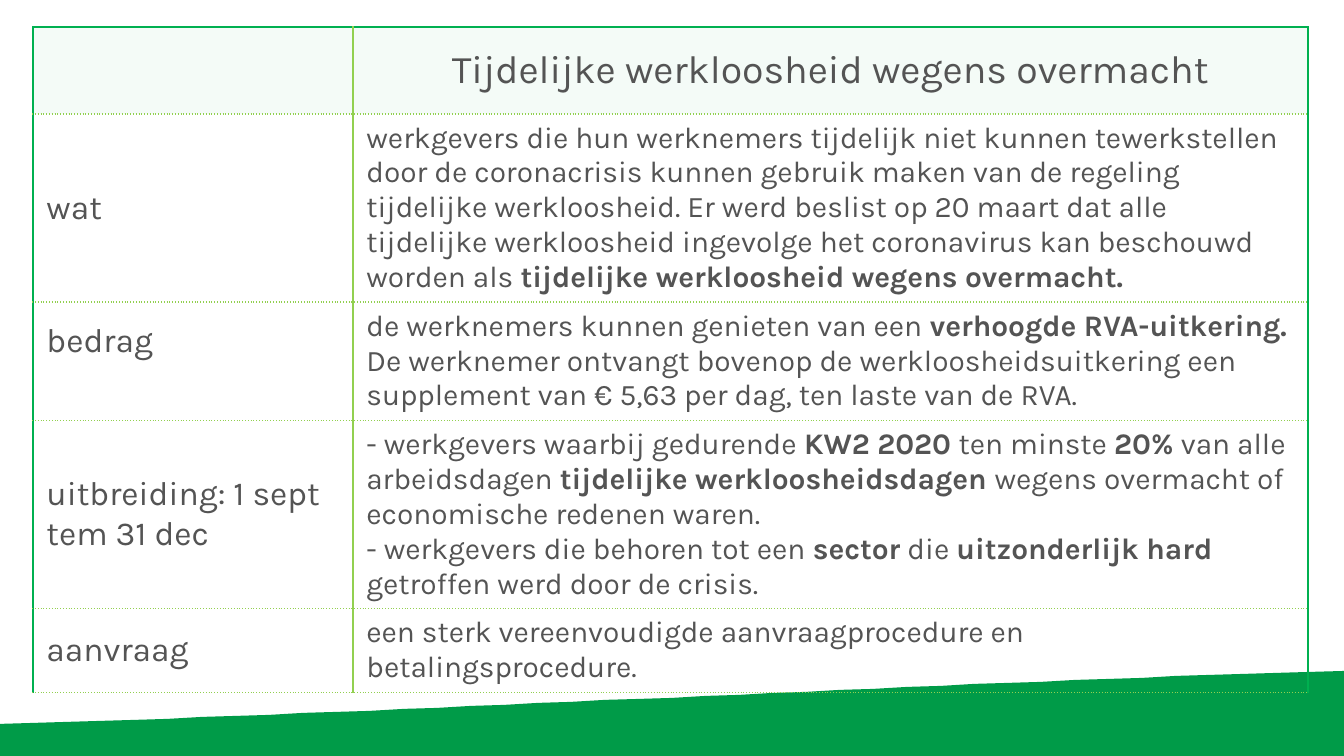
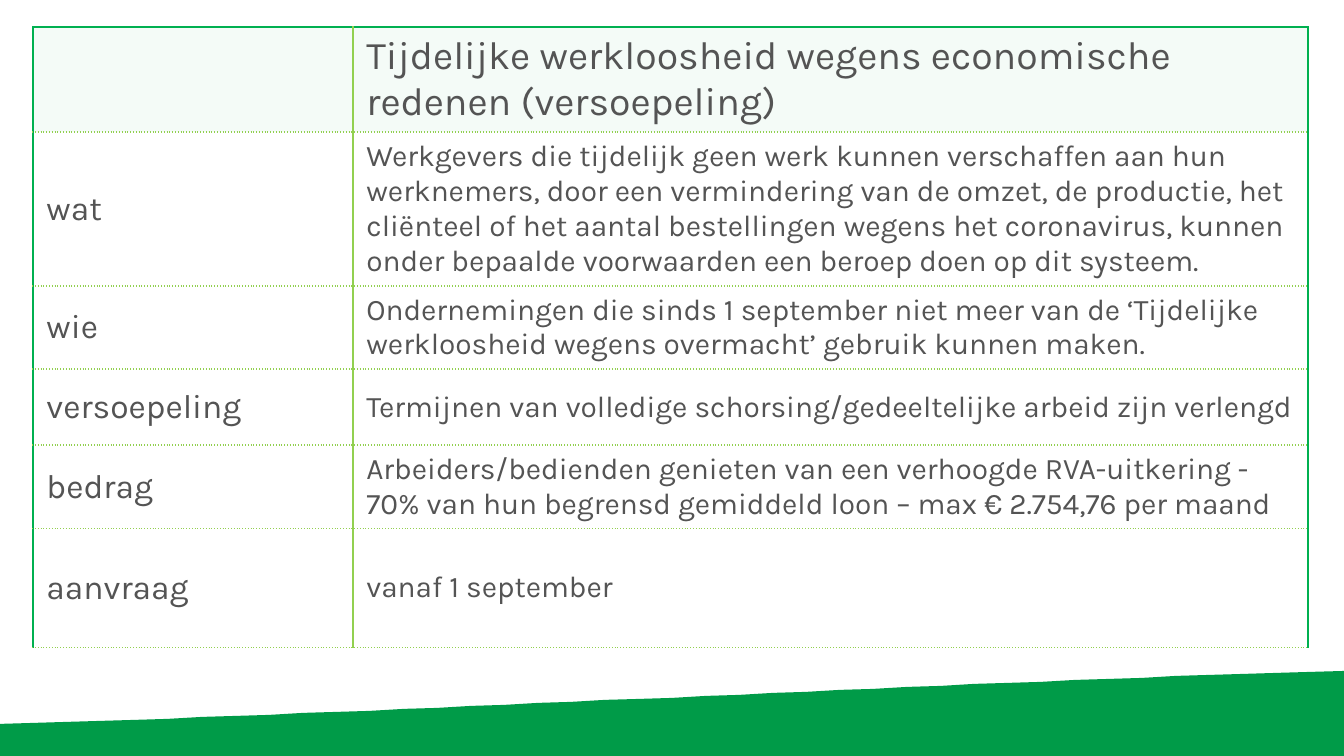
"""Build two table slides on temporary unemployment schemes."""
from lxml import etree
from pptx import Presentation
from pptx import util as u
from pptx.dml.color import RGBColor
from pptx.enum import text
from pptx.oxml.ns import qn

EMU_PER_PX = 914400 / 134.4
FONT = "Karla"
INK = RGBColor(0x54, 0x54, 0x54)
HEADER_TINT = RGBColor(0xF4, 0xFB, 0xF7)
HILL_GREEN = RGBColor(0x00, 0x9B, 0x48)
FRAME_GREEN = RGBColor(0x00, 0xB0, 0x50)
RULE_GREEN = RGBColor(0x92, 0xD0, 0x50)

SLIDE_W, SLIDE_H = 1344, 756
TABLE_LEFT, TABLE_TOP = 33, 27
COLUMNS = [320, 955]
HILL_CURVE = [(0, 724), (450, 711), (894, 684), (1345, 671)]
CURVE_STEPS = 40


def px(length):
    return u.Emu(round(length * EMU_PER_PX))


def add_border(cell, side, color, dash):
    line = etree.SubElement(cell._tc.get_or_add_tcPr(), qn(f"a:ln{side}"), w=str(u.Pt(1)))
    fill = etree.SubElement(line, qn("a:solidFill"))
    etree.SubElement(fill, qn("a:srgbClr"), val=str(color))
    etree.SubElement(line, qn("a:prstDash"), val=dash)


schemes = [
    {
        "heading": "Tijdelijke werkloosheid wegens overmacht",
        "align": text.PP_ALIGN.CENTER,
        "heading_height": 87,
        "topics": [
            ("wat", 188, [
                ("werkgevers die hun werknemers tijdelijk niet kunnen tewerkstellen door de coronacrisis "
                 "kunnen gebruik maken van de regeling tijdelijke werkloosheid. Er werd beslist op "
                 "20 maart dat alle tijdelijke werkloosheid ingevolge het coronavirus kan beschouwd "
                 "worden als ", False),
                ("tijdelijke werkloosheid wegens overmacht. ", True)]),
            ("bedrag", 118, [
                ("de werknemers kunnen genieten van een ", False),
                ("verhoogde RVA-uitkering. ", True),
                ("De werknemer ontvangt bovenop de werkloosheidsuitkering een supplement van "
                 "€ 5,63 per dag, ten laste van de RVA. ", False)]),
            ("uitbreiding: 1 sept tem 31 dec", 188, [
                ("- werkgevers waarbij gedurende ", False),
                ("KW2 2020 ", True),
                ("ten minste ", False),
                ("20%", True),
                (" van alle arbeidsdagen ", False),
                ("tijdelijke werkloosheidsdagen ", True),
                ("wegens overmacht of economische redenen waren. ", False),
                ("\n", False),
                ("- werkgevers die behoren tot een ", False),
                ("sector", True),
                (" die ", False),
                ("uitzonderlijk hard ", True),
                ("getroffen werd door de crisis.", False)]),
            ("aanvraag", 84, [
                ("een sterk vereenvoudigde aanvraagprocedure en betalingsprocedure.", False)]),
        ],
        "raised_topic": "bedrag",
    },
    {
        "heading": "Tijdelijke werkloosheid wegens economische redenen (versoepeling)",
        "align": text.PP_ALIGN.LEFT,
        "heading_height": 105,
        "topics": [
            ("wat", 154, [
                ("Werkgevers die tijdelijk geen werk kunnen verschaffen aan hun werknemers, door een "
                 "vermindering van de omzet, de productie, het cliënteel of het aantal bestellingen "
                 "wegens het coronavirus, kunnen onder bepaalde voorwaarden een beroep doen op dit "
                 "systeem.", False)]),
            ("wie", 83, [
                ("Ondernemingen die sinds 1 september niet meer van de ‘Tijdelijke werkloosheid "
                 "wegens overmacht’ gebruik kunnen maken.", False)]),
            ("versoepeling", 76, [
                ("Termijnen van volledige schorsing/gedeeltelijke arbeid zijn verlengd", False)]),
            ("bedrag", 83, [
                ("Arbeiders/bedienden genieten van een verhoogde RVA-uitkering - 70% van hun "
                 "begrensd gemiddeld loon – max € 2.754,76 per maand", False)]),
            ("aanvraag", 119, [("vanaf 1 september", False)]),
        ],
        "raised_topic": None,
    },
]

deck = Presentation()
deck.slide_width, deck.slide_height = px(SLIDE_W), px(SLIDE_H)

start, pull_1, pull_2, end = HILL_CURVE
hill_top = []
for step in range(CURVE_STEPS + 1):
    t = step / CURVE_STEPS
    weights = [(1 - t) ** 3, 3 * t * (1 - t) ** 2, 3 * t ** 2 * (1 - t), t ** 3]
    hill_top.append(tuple(sum(w * point[axis] for w, point in zip(weights, HILL_CURVE))
                          for axis in (0, 1)))

for scheme in schemes:
    slide = deck.slides.add_slide(deck.slide_layouts[6])

    outline = slide.shapes.build_freeform(*start, scale=EMU_PER_PX)
    outline.add_line_segments(hill_top[1:] + [(SLIDE_W, SLIDE_H), (0, SLIDE_H)], close=True)
    hill = outline.convert_to_shape()
    hill.shadow.inherit = False
    hill.fill.solid()
    hill.fill.fore_color.rgb = HILL_GREEN
    hill.line.fill.background()

    rows = [("", scheme["heading_height"], [(scheme["heading"], False)])] + scheme["topics"]
    heights = [height for _, height, _ in rows]
    overview = slide.shapes.add_table(
        len(rows), len(COLUMNS), px(TABLE_LEFT), px(TABLE_TOP),
        px(sum(COLUMNS)), px(sum(heights))).table
    overview.first_row = overview.horz_banding = False
    for column, width in zip(overview.columns, COLUMNS):
        column.width = px(width)

    for r, (topic, height, explanation) in enumerate(rows):
        overview.rows[r].height = px(height)
        for c, runs in enumerate([[(topic, False)], explanation]):
            cell = overview.cell(r, c)
            cell.vertical_anchor = text.MSO_ANCHOR.MIDDLE
            add_border(cell, "L", RULE_GREEN if c else FRAME_GREEN, "solid")
            add_border(cell, "R", FRAME_GREEN if c else RULE_GREEN, "solid")
            add_border(cell, "T", RULE_GREEN if r else FRAME_GREEN, "sysDot" if r else "solid")
            add_border(cell, "B", RULE_GREEN, "sysDot")
            if r:
                cell.fill.background()
            else:
                cell.fill.solid()
                cell.fill.fore_color.rgb = HEADER_TINT
            if c == 0 and topic and topic == scheme["raised_topic"]:
                cell.margin_bottom = px(46)

            paragraph = cell.text_frame.paragraphs[0]
            paragraph.alignment = text.PP_ALIGN.LEFT if r else scheme["align"]
            for words, bold in runs:
                if words == "\n":
                    paragraph.add_line_break()
                elif words:
                    run = paragraph.add_run()
                    run.text = words
                    run.font.name = FONT
                    run.font.size = u.Pt(21 if r == 0 else 16 if c else 18)
                    run.font.bold = bold
                    run.font.color.rgb = INK

deck.save("out.pptx")
